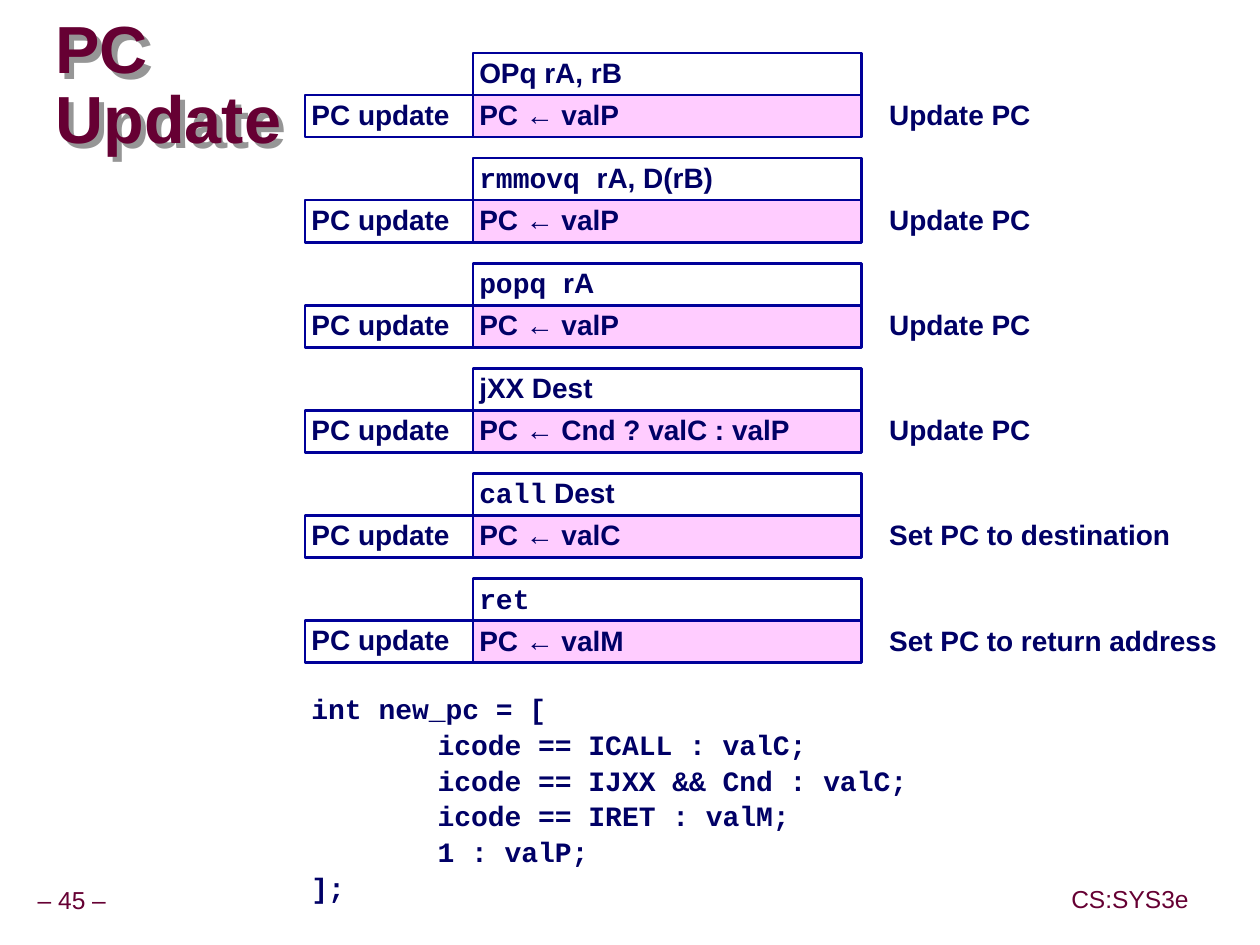
import pptx
import pptx.util
import pptx.dml.color
import pptx.enum.shapes
import pptx.enum.text
import lxml.etree

Inches = pptx.util.Inches
Pt = pptx.util.Pt
ANCHOR = pptx.enum.text.MSO_ANCHOR
ALIGN = pptx.enum.text.PP_ALIGN

SANS, MONO = "Arial", "Courier New"
NAVY, BLUE, PINK, WINE, GREY = "000066", "000099", "FFCCFF", "660033", "969696"

TITLE = ["PC", "Update"]
STAGE = "PC update"
STEPS = [
    ([("OPq rA, rB", SANS)], "PC ← valP", "Update PC"),
    ([("rmmovq ", MONO), ("rA, D(rB)", SANS)], "PC ← valP", "Update PC"),
    ([("popq ", MONO), ("rA", SANS)], "PC ← valP", "Update PC"),
    ([("jXX Dest", SANS)], "PC ← Cnd ? valC : valP", "Update PC"),
    ([("call", MONO), (" Dest", SANS)], "PC ← valC", "Set PC to destination"),
    ([("ret", MONO)], "PC ← valM", "Set PC to return address"),
]
CODE = [
    (0, "int new_pc = ["),
    (1, "icode == ICALL : valC;"),
    (1, "icode == IJXX && Cnd : valC;"),
    (1, "icode == IRET : valM;"),
    (1, "1 : valP;"),
    (0, "];"),
]
FOOTS = [
    ("– 45 –", (0.24, 6.99, 0.66, 0.31)),
    ("CS:SYS3e", (8.44, 6.98, 1.04, 0.32)),
]

TOP, ROW = 0.42, 1 / 3
PITCH = 2.5 * ROW
STAGE_X, STAGE_W = 2.42, 1.33
MAIN_X, MAIN_W = 3.75, 3.08
NOTE_X, NOTE_W = 7, 2.95

deck = pptx.Presentation()
deck.slide_width, deck.slide_height = Inches(9.99), Inches(7.49)
slide = deck.slides.add_slide(deck.slide_layouts[6])


def tint(text):
    return pptx.dml.color.RGBColor.from_string(text)


def write(shape, lines, size=16, face=SANS, color=NAVY, bold=True,
          space=0.9, inset=0.05, anchor=ANCHOR.TOP, align=ALIGN.LEFT, wrap=True):
    frame = shape.text_frame
    frame.word_wrap = wrap
    frame.vertical_anchor = anchor
    frame.margin_left = frame.margin_right = Inches(inset)
    frame.margin_top = frame.margin_bottom = Inches(inset)
    for n, line in enumerate(lines):
        para = frame.add_paragraph() if n else frame.paragraphs[0]
        para.alignment, para.line_spacing = align, space
        font = para.font
        font.size, font.bold, font.name = Pt(size), bold, face
        font.color.rgb = tint(color)
        runs = [(line, face)] if isinstance(line, str) else line
        for text, name in runs:
            run = para.add_run()
            run.text = text
            if name != face:
                run.font.name = name
    return frame


def label(box, lines, **style):
    shape = slide.shapes.add_textbox(*map(Inches, box))
    write(shape, lines, **style)
    return shape


def cell(box, line, fill=None, **style):
    kind = pptx.enum.shapes.MSO_SHAPE.RECTANGLE
    shape = slide.shapes.add_shape(kind, *map(Inches, box))
    shape.shadow.inherit = False
    if fill:
        shape.fill.solid()
        shape.fill.fore_color.rgb = tint(fill)
    else:
        shape.fill.background()
    shape.line.color.rgb = tint(BLUE)
    shape.line.width = Pt(1.5)
    write(shape, [line], **style)


def shade(shape, color):
    shape.shadow.inherit = False
    space = "{http://schemas.openxmlformats.org/drawingml/2006/main}"
    effect = shape.element.spPr.find(space + "effectLst")
    drop = lxml.etree.SubElement(effect, space + "outerShdw",
                                 dist=str(Inches(0.06)), dir="2700000", algn="ctr")
    lxml.etree.SubElement(drop, space + "srgbClr", val=color)


for text, box in FOOTS:
    label(box, [text], size=14, color=WINE, bold=False,
          anchor=ANCHOR.MIDDLE, align=ALIGN.CENTER, wrap=False)

head = label((0.44, 0.27, 9.52, 0.85), TITLE, size=38, color=WINE,
             space=0.87, inset=0, anchor=ANCHOR.MIDDLE)
shade(head, GREY)

for n, (order, action, note) in enumerate(STEPS):
    y = TOP + n * PITCH
    cell((MAIN_X, y, MAIN_W, ROW), order)
    cell((MAIN_X, y + ROW, MAIN_W, ROW), action, fill=PINK)
    cell((STAGE_X, y + ROW, STAGE_W, ROW), STAGE, anchor=ANCHOR.MIDDLE)
    label((NOTE_X, y + ROW, NOTE_W, ROW), [note])

code = label((STAGE_X, 5.42, 5.83, 1.7), [text for _, text in CODE],
             face=MONO, space=1.06)
for para, (depth, _) in zip(code.text_frame.paragraphs, CODE):
    if depth:
        para._p.get_or_add_pPr().set("marL", str(Inches(depth)))

deck.save("out.pptx")
